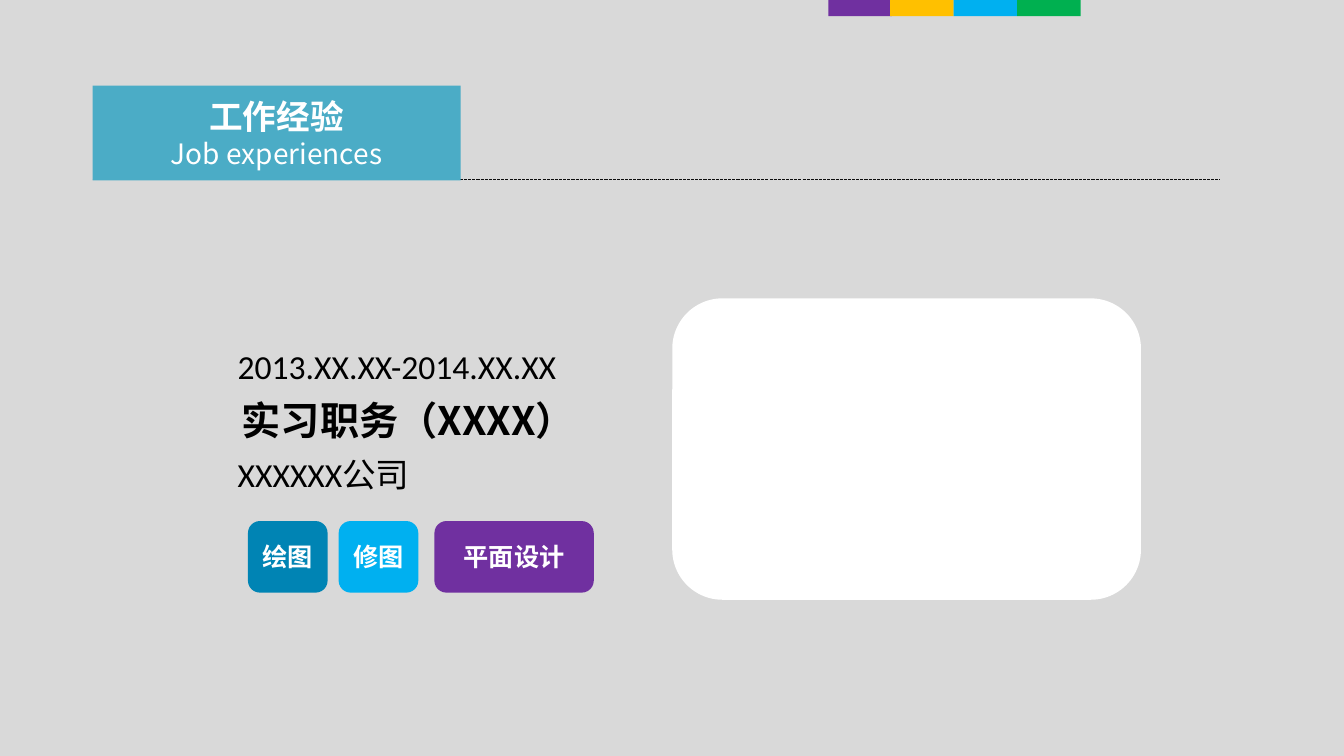
from lxml import etree
from pptx import Presentation
from pptx.dml.color import RGBColor
from pptx.enum import dml, shapes, text
from pptx.oxml import ns
from pptx.util import Pt

SANS, LATIN = "Noto Sans CJK SC", "Calibri"
RECT = shapes.MSO_SHAPE.RECTANGLE
ROUND = shapes.MSO_SHAPE.ROUNDED_RECTANGLE
MID = text.PP_ALIGN.CENTER

# left, colour
STRIPES = [(591.8, "7030A0"), (635.8, "FFC000"), (681.1, "00B0F0"), (726.5, "00B050")]
TITLE = [("工作经验", 24, True), ("Job experiences", 20, False)]
# text, left, top, width, height, size, font, bold
JOB = [
    ("2013.XX.XX-2014.XX.XX", 162.7, 243.4, 261.4, 36, 24, LATIN, False),
    ("实习职务（XXXX）", 165.6, 279.4, 272.2, 41, 28, SANS, True),
    ("XXXXXX公司", 162.7, 320.4, 153.4, 36, 24, LATIN, False),
]
# text, left, width, colour
SKILLS = [
    ("绘图", 177.1, 56.9, "0084B4"),
    ("修图", 241.9, 56.9, "00B0F0"),
    ("平面设计", 310.3, 113.8, "7030A0"),
]


def rgb(code):
    return RGBColor.from_string(code)


def block(kind, x, y, w, h, color):
    """Add a plain filled shape without an outline."""
    shape = slide.shapes.add_shape(kind, Pt(x), Pt(y), Pt(w), Pt(h))
    shape.shadow.inherit = False
    shape.fill.solid()
    shape.fill.fore_color.rgb = rgb(color)
    shape.line.fill.background()
    shape.text_frame.vertical_anchor = text.MSO_ANCHOR.MIDDLE
    return shape


def write(para, words, size=18, font=SANS, color="FFFFFF", bold=True, align=MID):
    para.alignment = align
    run = para.add_run()
    run.text = words
    run.font.size = Pt(size)
    run.font.name = font
    run.font.bold = bold
    run.font.color.rgb = rgb(color)
    east = etree.SubElement(run._r.get_or_add_rPr(), ns.qn("a:ea"))
    east.set("typeface", SANS)


deck = Presentation()
deck.slide_width, deck.slide_height = Pt(960), Pt(540)
slide = deck.slides.add_slide(deck.slide_layouts[6])
slide.background.fill.solid()
slide.background.fill.fore_color.rgb = rgb("D9D9D9")

for x, color in STRIPES:
    block(RECT, x, 0, 45.4, 11.5, color)

rule = slide.shapes.add_connector(
    shapes.MSO_CONNECTOR.STRAIGHT, Pt(66.2), Pt(128.2), Pt(871.2), Pt(128.2))
rule.line.color.rgb = rgb("0D0D0D")
rule.line.width = Pt(0.75)
rule.line.dash_style = dml.MSO_LINE.SQUARE_DOT
etree.SubElement(rule._element.spPr, ns.qn("a:effectLst"))

frame = block(RECT, 66.2, 61.2, 262.8, 67.7, "4BACC6").text_frame
for i, (words, size, bold) in enumerate(TITLE):
    para = frame.add_paragraph() if i else frame.paragraphs[0]
    write(para, words, size=size, bold=bold)

block(ROUND, 480.2, 213.1, 334.8, 215.3, "FFFFFF")

for words, x, y, w, h, size, font, bold in JOB:
    frame = slide.shapes.add_textbox(Pt(x), Pt(y), Pt(w), Pt(h)).text_frame
    frame.word_wrap = True
    frame.auto_size = text.MSO_AUTO_SIZE.SHAPE_TO_FIT_TEXT
    write(frame.paragraphs[0], words, size=size, font=font, color="000000",
          bold=bold, align=text.PP_ALIGN.LEFT)

for words, x, w, color in SKILLS:
    skill = block(ROUND, x, 372.2, w, 51.1, color)
    write(skill.text_frame.paragraphs[0], words)

deck.save("out.pptx")
